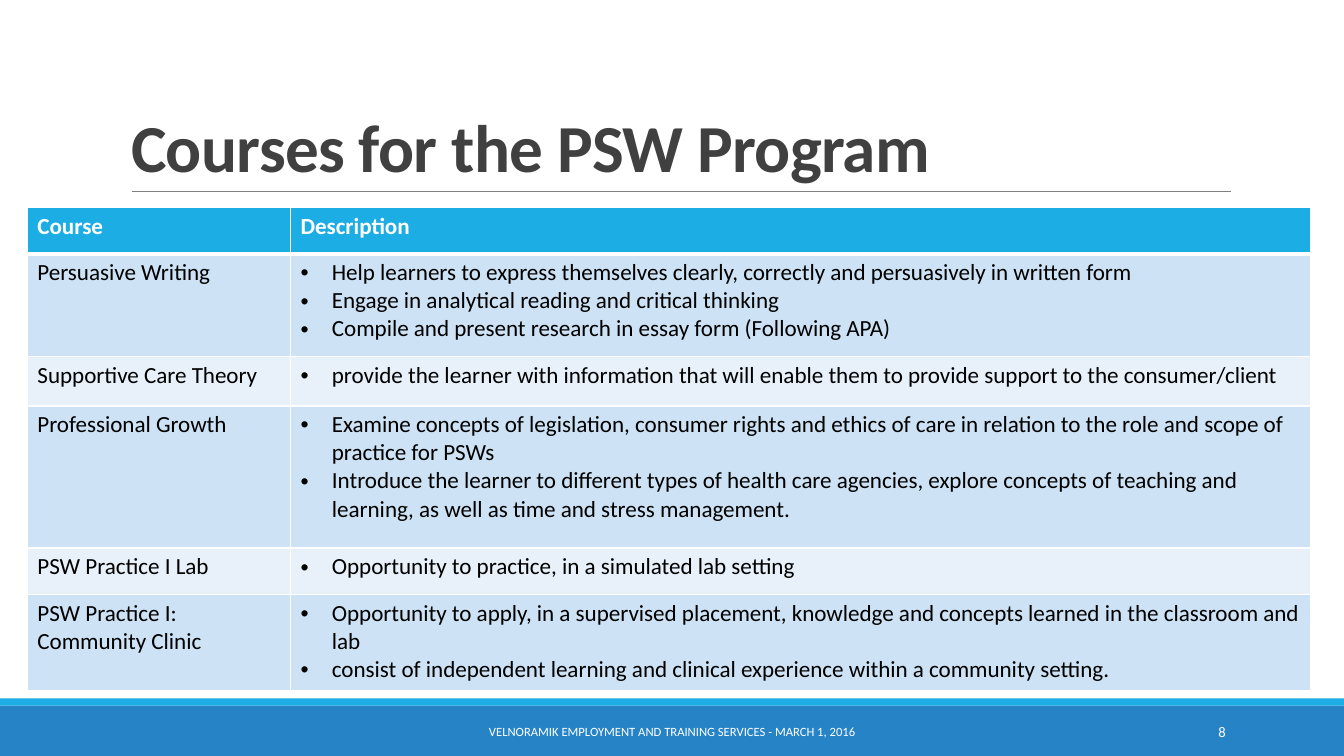
from lxml.etree import SubElement
from pptx import Presentation
from pptx.dml.color import RGBColor
from pptx.enum.shapes import MSO_CONNECTOR, MSO_SHAPE
from pptx.enum.text import MSO_ANCHOR, MSO_AUTO_SIZE, PP_ALIGN
from pptx.oxml import parse_xml
from pptx.oxml.ns import nsdecls, qn
from pptx.util import Cm, Pt

COLOURS = {
    "white": "FFFFFF",
    "black": "000000",
    "title": "404040",
    "rule": "808080",
    "accent": "1CADE4",
    "footer": "2683C6",
    "band_dark": "CDE3F5",
    "band_light": "E8F1FA",
}

COURSES = [
    (["Persuasive Writing"], [
        "Help learners to express themselves clearly, correctly and persuasively in written form",
        "Engage in analytical reading and critical thinking",
        "Compile and present research in essay form (Following APA)",
    ]),
    (["Supportive Care Theory"], [
        "provide the learner with information that will enable them to provide support to the consumer/client",
    ]),
    (["Professional Growth"], [
        "Examine concepts of legislation, consumer rights and ethics of care in relation to the role and scope of practice for PSWs",
        "Introduce the learner to different types of health care agencies, explore concepts of teaching and learning, as well as time and stress management.",
    ]),
    (["PSW Practice I Lab"], ["Opportunity to practice, in a simulated lab setting"]),
    (["PSW Practice I:", "Community Clinic"], [
        "Opportunity to apply, in a supervised placement, knowledge and concepts learned in the classroom and lab",
        "consist of independent learning and clinical experience within a community setting.",
    ]),
]
COLUMN_WIDTHS = [6.63, 25.7]
ROW_HEIGHTS = [1.17, 2.59, 1.24, 3.58, 1.17, 2.41]


def colour(name):
    return RGBColor.from_string(COLOURS[name])


class SlideBuilder:
    font_name = "Calibri"

    def __init__(self, slide):
        self.slide = slide

    def style(self, paragraph, size, colour_name, bold=False):
        paragraph.font.name = self.font_name
        paragraph.font.size = Pt(size)
        paragraph.font.bold = bold
        paragraph.font.color.rgb = colour(colour_name)

    def bar(self, top, height, colour_name):
        shape = self.slide.shapes.add_shape(
            MSO_SHAPE.RECTANGLE, 0, Cm(top), Cm(33.87), Cm(height))
        shape.shadow.inherit = False
        shape.fill.solid()
        shape.fill.fore_color.rgb = colour(colour_name)
        shape.line.fill.background()

    def rule(self, left, right, top):
        line = self.slide.shapes.add_connector(
            MSO_CONNECTOR.STRAIGHT, Cm(left), Cm(top), Cm(right), Cm(top))
        line.line.color.rgb = colour("rule")
        line.line.width = Pt(0.5)
        SubElement(line._element.spPr, qn("a:effectLst"))

    def title(self, text, left, top, width, height):
        shape = self.slide.shapes.title
        shape.left, shape.top = Cm(left), Cm(top)
        shape.width, shape.height = Cm(width), Cm(height)
        frame = shape.text_frame
        frame.text = text
        frame.auto_size = MSO_AUTO_SIZE.NONE
        frame.vertical_anchor = MSO_ANCHOR.BOTTOM
        paragraph = frame.paragraphs[0]
        paragraph.alignment = PP_ALIGN.LEFT
        paragraph.line_spacing = 0.85
        self.style(paragraph, 48, "title", bold=True)
        paragraph.runs[0].font._element.set("spc", "-50")

    def label(self, text, left, width, size, alignment):
        frame = self.slide.shapes.add_textbox(
            Cm(left), Cm(17.93), Cm(width), Cm(1.02)).text_frame
        frame.word_wrap = True
        frame.vertical_anchor = MSO_ANCHOR.MIDDLE
        frame.text = text
        frame.paragraphs[0].alignment = alignment
        self.style(frame.paragraphs[0], size, "white")

    def bullet(self, paragraph):
        properties = paragraph._p.get_or_add_pPr()
        properties.set("marL", str(Cm(0.79)))
        properties.set("indent", str(-Cm(0.79)))
        SubElement(properties, qn("a:buFont"), typeface="Arial")
        SubElement(properties, qn("a:buChar"), char="•")

    def borders(self, cell, top, bottom):
        properties = cell._tc.get_or_add_tcPr()
        widths = {"L": 1, "R": 1, "T": top, "B": bottom}
        for position, (side, width) in enumerate(widths.items()):
            properties.insert(position, parse_xml(
                f'<a:ln{side} {nsdecls("a")} w="{Pt(width)}"><a:solidFill>'
                f'<a:srgbClr val="{COLOURS["white"]}"/></a:solidFill></a:ln{side}>'))

    def cell(self, cell, lines, row, bulleted):
        header = row == 0
        fill = "accent" if header else "band_dark" if row % 2 else "band_light"
        cell.fill.solid()
        cell.fill.fore_color.rgb = colour(fill)
        self.borders(cell, 3 if row == 1 else 1, 3 if header else 1)
        cell.text_frame.text = "\n".join(lines)
        for paragraph in cell.text_frame.paragraphs:
            self.style(paragraph, 16.5, "white" if header else "black", header)
            if bulleted:
                self.bullet(paragraph)

    def table(self, left, top, rows):
        table = self.slide.shapes.add_table(
            len(rows), len(COLUMN_WIDTHS), Cm(left), Cm(top),
            Cm(sum(COLUMN_WIDTHS)), Cm(sum(ROW_HEIGHTS))).table
        for column, width in zip(table.columns, COLUMN_WIDTHS):
            column.width = Cm(width)
        for row, (height, contents) in enumerate(zip(ROW_HEIGHTS, rows)):
            table.rows[row].height = Cm(height)
            for column, lines in enumerate(contents):
                self.cell(table.cell(row, column), lines, row, row > 0 and column == 1)


def main():
    presentation = Presentation()
    presentation.slide_width, presentation.slide_height = Cm(33.87), Cm(19.05)
    builder = SlideBuilder(presentation.slides.add_slide(presentation.slide_layouts[5]))
    builder.bar(17.78, 1.27, "footer")
    builder.bar(17.6, 0.18, "accent")
    builder.rule(3.33, 31.01, 4.83)
    builder.title("Courses for the PSW Program", 3.05, 0.79, 27.94, 4.04)
    builder.table(0.69, 5.23, [(["Course"], ["Description"]), *COURSES])
    builder.label("8", 27.51, 3.63, 10.5, PP_ALIGN.RIGHT)
    builder.label("VELNORAMIK EMPLOYMENT AND TRAINING SERVICES - MARCH 1, 2016",
                  10.24, 13.39, 9, PP_ALIGN.CENTER)
    presentation.save("out.pptx")


if __name__ == "__main__":
    main()
